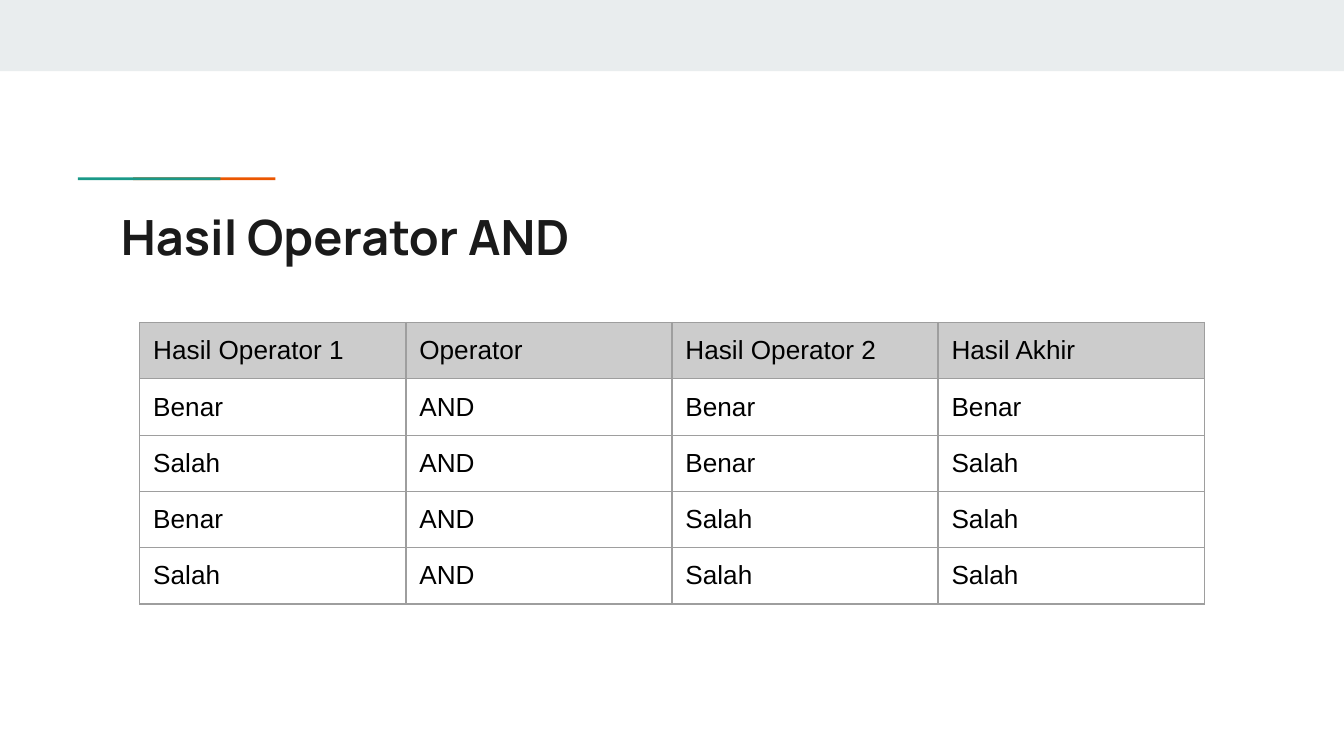
import pptx
import pptx.dml.color
import pptx.enum.shapes
import pptx.enum.text
import pptx.oxml
import pptx.oxml.ns
import pptx.util
from pptx.dml.color import RGBColor
from pptx.util import Inches

BAND = RGBColor(0xE9, 0xED, 0xEE)
ORANGE = RGBColor(0xEB, 0x56, 0x00)
TEAL = RGBColor(0x1A, 0x99, 0x88)
INK = RGBColor(0x1A, 0x1A, 0x1A)
BLACK = RGBColor(0x00, 0x00, 0x00)
HEADER = RGBColor(0xCC, 0xCC, 0xCC)
BORDER = RGBColor(0x9E, 0x9E, 0x9E)

ROWS = [
    ["Hasil Operator 1", "Operator", "Hasil Operator 2", "Hasil Akhir"],
    ["Benar", "AND", "Benar", "Benar"],
    ["Salah", "AND", "Benar", "Salah"],
    ["Benar", "AND", "Salah", "Salah"],
    ["Salah", "AND", "Salah", "Salah"],
]


class SlideBuilder:
    """Holds the text style and the current slide, and adds elements to it."""

    title_font = "Manrope"
    body_font = "Arial"
    inset = Inches(0.1)

    def __init__(self, slide):
        self.slide = slide

    def set_insets(self, target):
        target.margin_left = target.margin_right = self.inset
        target.margin_top = target.margin_bottom = self.inset

    def add_run(self, paragraph, text, font_name, size, color, bold=False):
        run = paragraph.add_run()
        run.text = text
        run.font.name = font_name
        run.font.size = pptx.util.Pt(size)
        run.font.color.rgb = color
        run.font.bold = bold

    def add_bar(self, left, top, width, height, color):
        shape = self.slide.shapes.add_shape(
            pptx.enum.shapes.MSO_SHAPE.RECTANGLE,
            Inches(left), Inches(top), Inches(width), Inches(height))
        shape.shadow.inherit = False
        shape.fill.solid()
        shape.fill.fore_color.rgb = color
        shape.line.fill.background()

    def set_title(self, text, left, top, width, height):
        title = self.slide.shapes.title
        title.left, title.top = Inches(left), Inches(top)
        title.width, title.height = Inches(width), Inches(height)
        frame = title.text_frame
        self.set_insets(frame)
        frame.word_wrap = True
        frame.auto_size = pptx.enum.text.MSO_AUTO_SIZE.NONE
        frame.vertical_anchor = pptx.enum.text.MSO_ANCHOR.TOP
        paragraph = frame.paragraphs[0]
        paragraph.alignment = pptx.enum.text.PP_ALIGN.LEFT
        self.add_run(paragraph, text, self.title_font, 26, INK, bold=True)

    def set_borders(self, cell):
        properties = cell._tc.get_or_add_tcPr()
        for position, side in enumerate(("lnL", "lnR", "lnT", "lnB")):
            properties.insert(position, pptx.oxml.parse_xml(
                f'<a:{side} {pptx.oxml.ns.nsdecls("a")} w="{pptx.util.Pt(0.75)}">'
                f'<a:solidFill><a:srgbClr val="{BORDER}"/></a:solidFill></a:{side}>'))

    def add_table(self, rows, left, top, column_width, row_height):
        column_count = len(rows[0])
        table = self.slide.shapes.add_table(
            len(rows), column_count, Inches(left), Inches(top),
            Inches(column_width * column_count),
            Inches(row_height * len(rows))).table
        table.first_row = table.horz_banding = False
        for row_index, row in enumerate(rows):
            for column_index, text in enumerate(row):
                cell = table.cell(row_index, column_index)
                self.set_insets(cell)
                if row_index == 0:
                    cell.fill.solid()
                    cell.fill.fore_color.rgb = HEADER
                else:
                    cell.fill.background()
                self.set_borders(cell)
                self.add_run(cell.text_frame.paragraphs[0], text,
                             self.body_font, 14, BLACK)


def main():
    presentation = pptx.Presentation()
    presentation.slide_width = Inches(10)
    presentation.slide_height = Inches(10 * 9 / 16)
    builder = SlideBuilder(
        presentation.slides.add_slide(presentation.slide_layouts[5]))
    builder.add_bar(0, 0, 10, 0.53, BAND)
    builder.add_bar(0.99, 1.32, 1.06, 0.02, ORANGE)
    builder.add_bar(0.58, 1.32, 1.06, 0.02, TEAL)
    builder.set_title("Hasil Operator AND", 0.8, 1.44, 8.41, 0.59)
    builder.add_table(ROWS, 1.04, 2.4, 1.98, 30 / 72)
    presentation.save("out.pptx")


if __name__ == "__main__":
    main()
